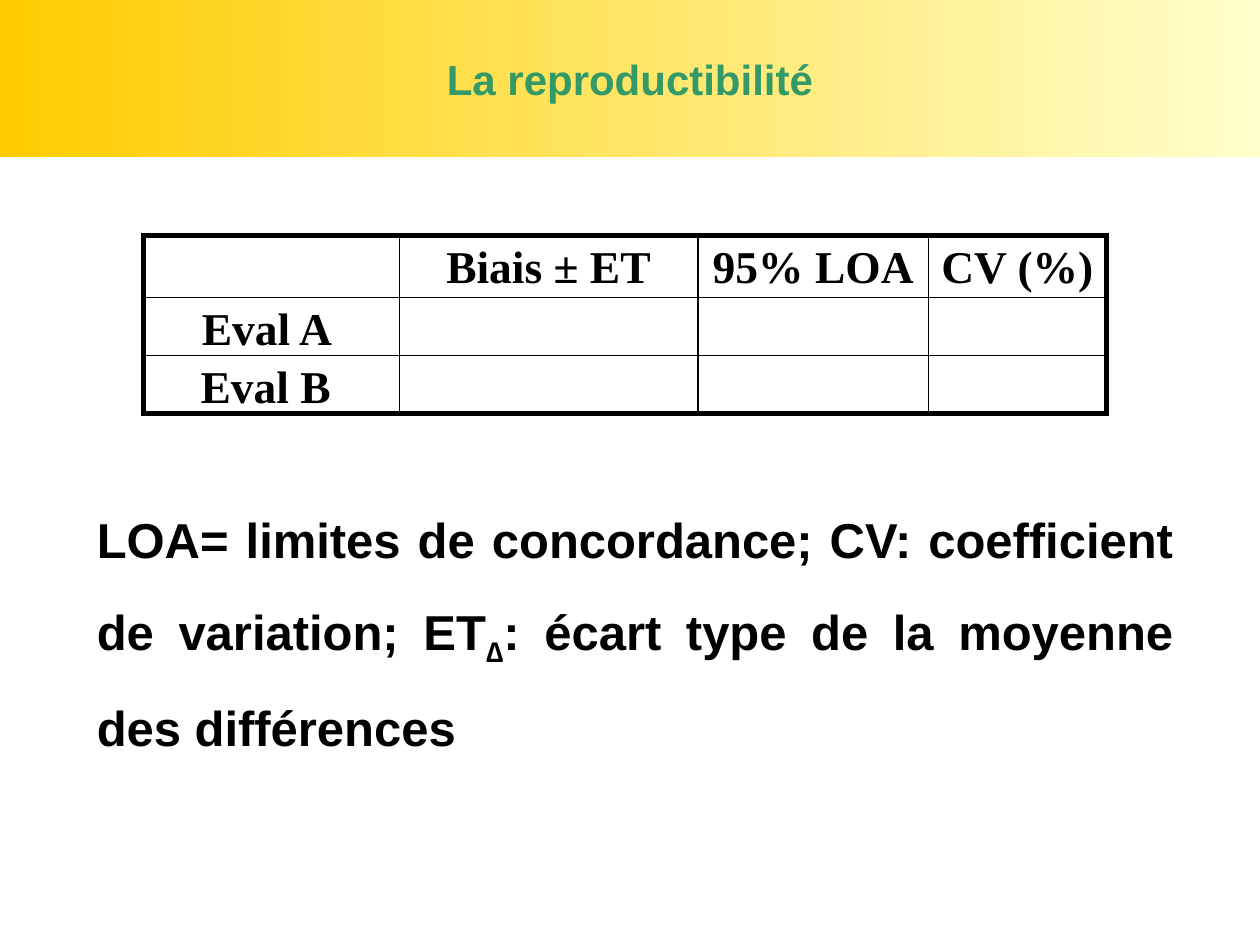
import pptx
import pptx.util
import pptx.dml.color
import pptx.enum.text
import pptx.oxml.ns
from lxml import etree

Inches, Pt = pptx.util.Inches, pptx.util.Pt
RGBColor = pptx.dml.color.RGBColor
Align = pptx.enum.text.PP_ALIGN
Anchor = pptx.enum.text.MSO_ANCHOR
qn = pptx.oxml.ns.qn

BLACK = RGBColor(0, 0, 0)
GREEN = RGBColor(0x33, 0x99, 0x66)
GOLD = RGBColor(0xFF, 0xCC, 0x00)
CREAM = RGBColor(0xFF, 0xFF, 0xCC)

TITLE = "La reproductibilité"
ROWS = [
    ["", "Biais ± ET", "95% LOA", "CV (%)"],
    ["Eval A ", "", "", ""],
    ["Eval B ", "", "", ""],
]
WIDTHS = [2.03, 2.37, 1.83, 1.41]
HEIGHTS = [0.49, 0.46, 0.45]
LEGEND = [
    ("LOA= limites de concordance; CV: coefficient de variation; ET", 0),
    ("∆", -25000),
    (": écart type de la moyenne des différences", 0),
]


def style(par, size, name, color, align, space=1):
    par.alignment = align
    par.line_spacing = space
    font = par.font
    font.size, font.name, font.bold = Pt(size), name, True
    font.color.rgb = color


def border(cell, edges):
    props = cell._tc.get_or_add_tcPr()
    for i, (side, thick) in enumerate(edges):
        line = etree.Element(qn(f"a:ln{side}"), w=str(Pt(3 if thick else 1)))
        fill = etree.SubElement(line, qn("a:solidFill"))
        etree.SubElement(fill, qn("a:srgbClr"), val=str(BLACK))
        props.insert(i, line)


def add_title(slide, width, height):
    title = slide.shapes.title
    title.left, title.top, title.width, title.height = 0, 0, width, height
    title.fill.gradient()
    title.fill.gradient_angle = 0
    for stop, color in zip(title.fill.gradient_stops, (GOLD, CREAM)):
        stop.color.rgb = color
    frame = title.text_frame
    frame.text = TITLE
    frame.vertical_anchor = Anchor.MIDDLE
    style(frame.paragraphs[0], 24, "Arial", GREEN, Align.CENTER)


def add_grid(slide):
    rows, cols = len(ROWS), len(WIDTHS)
    table = slide.shapes.add_table(
        rows, cols, Inches(1.14), Inches(1.87),
        Inches(sum(WIDTHS)), Inches(sum(HEIGHTS))).table
    table.first_row = table.horz_banding = False
    for col, width in zip(table.columns, WIDTHS):
        col.width = Inches(width)
    for row, height in zip(table.rows, HEIGHTS):
        row.height = Inches(height)
    for r, texts in enumerate(ROWS):
        for c, text in enumerate(texts):
            cell = table.cell(r, c)
            cell.fill.background()
            cell.margin_left = cell.margin_right = Inches(0.07)
            cell.margin_top = cell.margin_bottom = 0
            border(cell, [("L", c == 0), ("R", c == cols - 1),
                          ("T", r == 0), ("B", r == rows - 1)])
            if text:
                cell.text = text
                style(cell.text_frame.paragraphs[0], 26, "Times New Roman",
                      BLACK, Align.CENTER, 1.15)


def add_legend(slide):
    box = slide.shapes.add_textbox(
        Inches(0.67), Inches(3.76), Inches(8.74), Inches(2.93))
    frame = box.text_frame
    frame.word_wrap = True
    par = frame.paragraphs[0]
    for text, shift in LEGEND:
        run = par.add_run()
        run.text = text
        if shift:
            run.font._element.set("baseline", str(shift))
    style(par, 28, "Arial", BLACK, Align.JUSTIFY, 1.5)


def main():
    deck = pptx.Presentation()
    deck.slide_width, deck.slide_height = Inches(10), Inches(7.5)
    slide = deck.slides.add_slide(deck.slide_layouts[5])
    add_grid(slide)
    add_legend(slide)
    add_title(slide, deck.slide_width, deck.slide_height // 6)
    deck.save("out.pptx")


if __name__ == "__main__":
    main()
